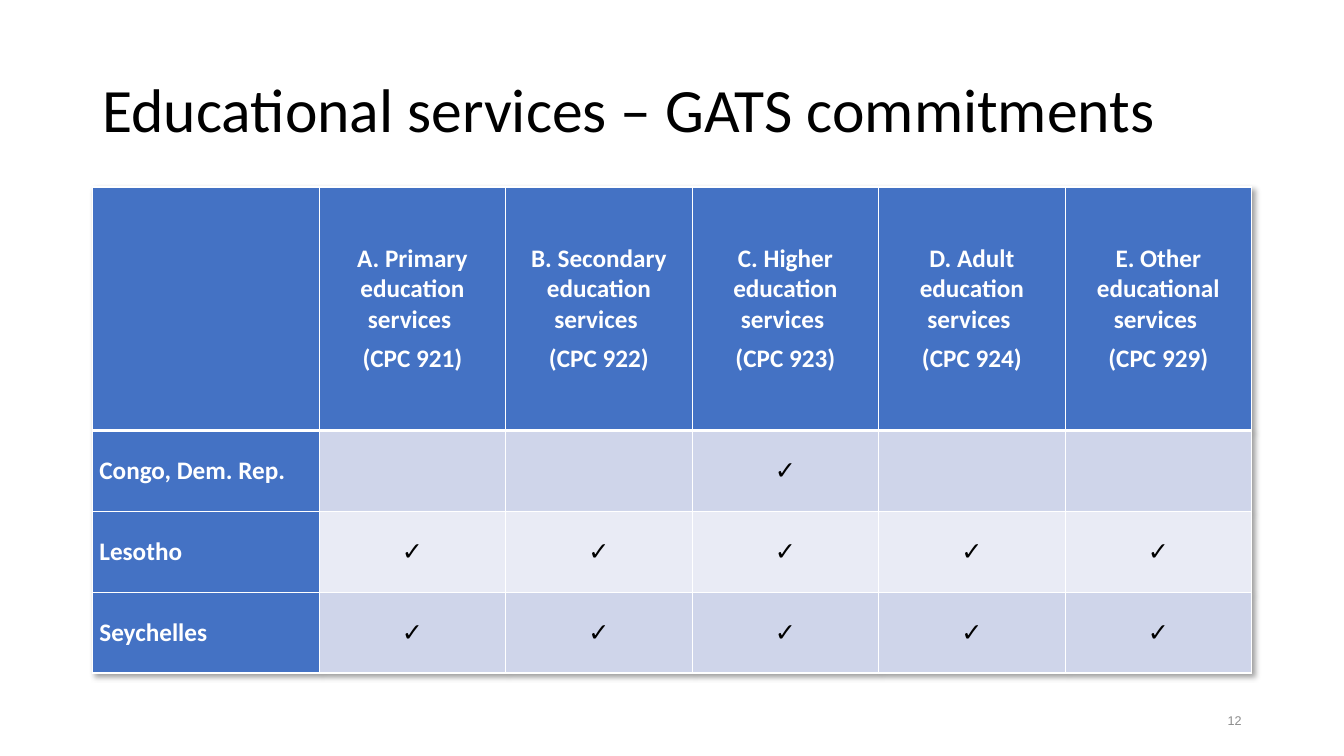
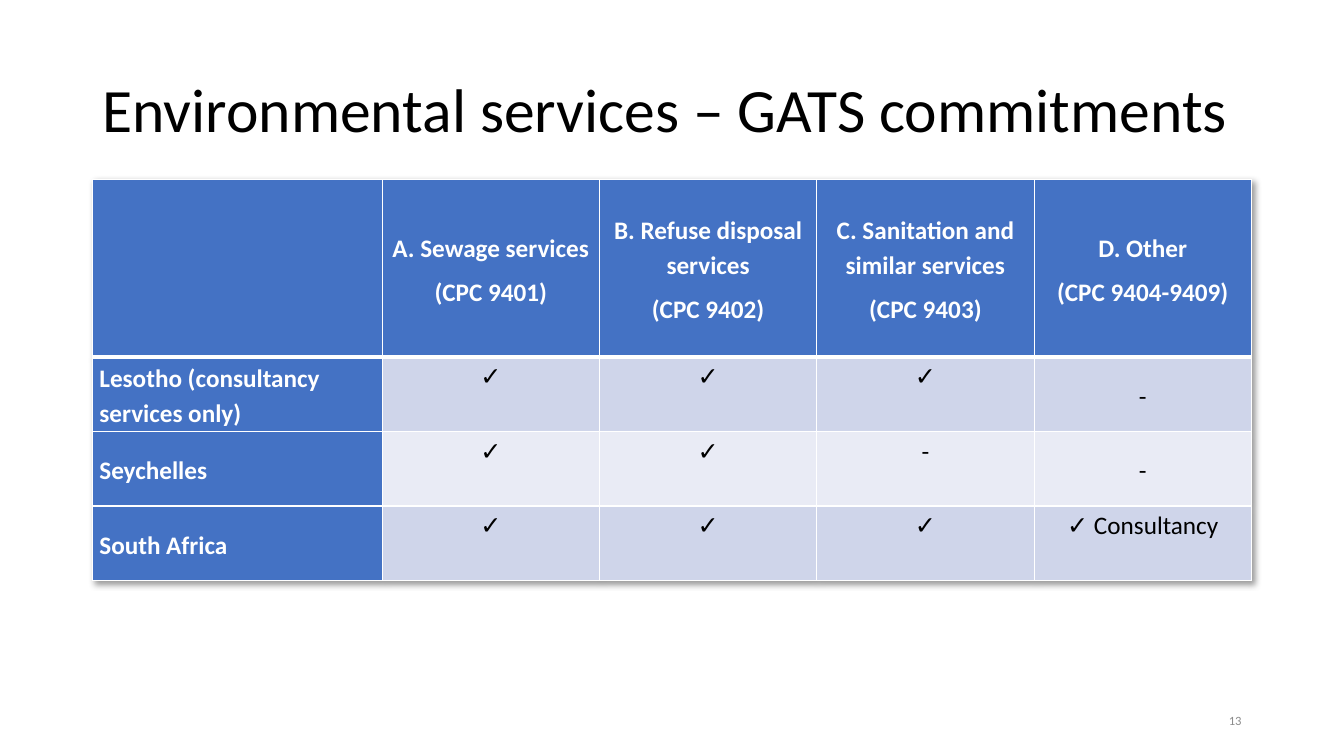
"""Build two slides of GATS commitment tables with a shared title, table and number style."""
from lxml import etree
from pptx import Presentation
from pptx import util as u
from pptx.dml import color
from pptx.enum import text
from pptx.oxml import ns

SCALE = 9525
SLIDE_SIZE = (1280, 720)
TITLE_BOX = (88, 38, 1104, 139)
NUMBER_BOX = (904, 667, 288, 38)
COLORS = {
    "ink": "000000",
    "paper": "FFFFFF",
    "header": "4472C4",
    "odd": "CFD5EA",
    "even": "E9EBF5",
    "number": "8C8C8C",
}
FONT = "Calibri"
MIDDLE, TOP = text.MSO_ANCHOR.MIDDLE, text.MSO_ANCHOR.TOP
LEFT, CENTER, RIGHT = text.PP_ALIGN.LEFT, text.PP_ALIGN.CENTER, text.PP_ALIGN.RIGHT
CELL_FORMAT = {
    "margin_left": u.Inches(0.07),
    "margin_right": u.Inches(0.07),
    "margin_top": 0,
    "margin_bottom": 0,
}
CELL_SPACING = {"space_before": u.Pt(3), "space_after": u.Pt(3)}
SHADOW = {"blurRad": "50800", "dist": "38100", "dir": "2700000", "algn": "tl", "rotWithShape": "0"}
CHECK = "✓"

SLIDES = [
    {
        "title": "Educational services – GATS commitments",
        "number": "12",
        "number_font": "Arial",
        "box": (88, 178, 1104, 463),
        "label_width": 216,
        "row_height": 77,
        "line_spacing": 1.0,
        "mark_anchor": MIDDLE,
        "headers": [
            ("A. Primary education services ", "(CPC 921)"),
            ("B. Secondary education services ", "(CPC 922)"),
            ("C. Higher education services ", "(CPC 923)"),
            ("D. Adult education services ", "(CPC 924)"),
            ("E. Other educational services ", "(CPC 929)"),
        ],
        "rows": [
            ("Congo, Dem. Rep.", ["", "", CHECK, "", ""]),
            ("Lesotho", [CHECK] * 5),
            ("Seychelles", [CHECK] * 5),
        ],
    },
    {
        "title": "Environmental services – GATS commitments",
        "number": "13",
        "number_font": FONT,
        "box": (88, 171, 1104, 382),
        "label_width": 276,
        "row_height": 71,
        "line_spacing": 1.15,
        "mark_anchor": TOP,
        "headers": [
            ("A. Sewage services", "(CPC 9401)"),
            ("B. Refuse disposal services", "(CPC 9402)"),
            ("C. Sanitation and similar services", "(CPC 9403)"),
            ("D. Other", "(CPC 9404-9409)"),
        ],
        "rows": [
            ("Lesotho (consultancy services only)", [CHECK, CHECK, CHECK, "-"]),
            ("Seychelles", [CHECK, CHECK, "-", "-"]),
            ("South Africa", [CHECK, CHECK, CHECK, f"{CHECK} Consultancy"]),
        ],
    },
]


def px(length):
    """Turn px into EMU."""
    return u.Emu(round(length * SCALE))


def apply_format(target, values):
    """Set each attribute of the target from a dict."""
    for name, value in values.items():
        setattr(target, name, value)


def write_text(frame, lines, size, ink, align, font=FONT, bold=False, spacing=None):
    """Write one paragraph per line in a single style."""
    for index, line in enumerate(lines):
        paragraph = frame.add_paragraph() if index else frame.paragraphs[0]
        apply_format(paragraph, {"alignment": align, **(spacing or {})})
        run = paragraph.add_run()
        run.text = line
        apply_format(run.font, {"size": u.Pt(size), "name": font, "bold": bold})
        run.font.color.rgb = color.RGBColor.from_string(COLORS[ink])


def fill_text_box(shape, box, lines, **style):
    """Move a text shape to its box and write its text."""
    apply_format(shape, dict(zip(("left", "top", "width", "height"), map(px, box))))
    frame = shape.text_frame
    apply_format(frame, {
        "word_wrap": True,
        "auto_size": text.MSO_AUTO_SIZE.NONE,
        "vertical_anchor": MIDDLE,
    })
    write_text(frame, lines, **style)


def add_color(parent, name):
    """Append a colour element and return it."""
    return etree.SubElement(parent, ns.qn("a:srgbClr"), val=COLORS[name])


def style_cell(cell, fill, anchor, row):
    """Give a cell its fill, margins and white borders."""
    apply_format(cell, {**CELL_FORMAT, "vertical_anchor": anchor})
    cell.fill.solid()
    cell.fill.fore_color.rgb = color.RGBColor.from_string(COLORS[fill])
    properties = cell._tc.get_or_add_tcPr()
    widths = {"L": 1, "R": 1, "T": 3 if row == 1 else 1, "B": 3 if row == 0 else 1}
    for index, (side, width) in enumerate(widths.items()):
        line = etree.Element(ns.qn(f"a:ln{side}"), w=str(u.Pt(width)))
        add_color(etree.SubElement(line, ns.qn("a:solidFill")), "paper")
        properties.insert(index, line)


def add_table_shadow(table):
    """Put a soft shadow at the lower right of a table."""
    effects = etree.Element(ns.qn("a:effectLst"))
    shadow = etree.SubElement(effects, ns.qn("a:outerShdw"), **SHADOW)
    etree.SubElement(add_color(shadow, "ink"), ns.qn("a:alpha"), val="40000")
    table._tbl.tblPr.insert(0, effects)


def add_commitments(slide, content):
    """Add the table of services by country."""
    box, headers, rows = content["box"], content["headers"], content["rows"]
    grid = [[(), *headers]]
    grid += [[(label,), *((mark,) if mark else () for mark in marks)] for label, marks in rows]
    table = slide.shapes.add_table(len(grid), len(grid[0]), *map(px, box)).table
    apply_format(table, {"first_row": True, "first_col": True, "horz_banding": True})
    add_table_shadow(table)

    mark_width = (box[2] - content["label_width"]) / len(headers)
    header_height = box[3] - content["row_height"] * len(rows)
    for index, column in enumerate(table.columns):
        column.width = px(mark_width if index else content["label_width"])
    for index, row in enumerate(table.rows):
        row.height = px(content["row_height"] if index else header_height)

    spacing = {**CELL_SPACING, "line_spacing": content["line_spacing"]}
    for row, cells in enumerate(grid):
        for column, lines in enumerate(cells):
            cell = table.cell(row, column)
            heading = row == 0 or column == 0
            last_dash = column == len(headers) and lines == ("-",)
            fill = "header" if heading else "odd" if row % 2 else "even"
            anchor = MIDDLE if heading or last_dash else content["mark_anchor"]
            style_cell(cell, fill, anchor, row)
            write_text(cell.text_frame, lines, 18, "paper" if heading else "ink",
                       CENTER if column else LEFT, bold=heading, spacing=spacing)


def add_commitment_slide(presentation, content):
    """Add one slide with its title, table and number."""
    slide = presentation.slides.add_slide(presentation.slide_layouts[5])
    fill_text_box(slide.shapes.title, TITLE_BOX, [content["title"]], size=44, ink="ink",
                  align=LEFT, spacing={"line_spacing": 0.9})
    add_commitments(slide, content)
    number = slide.shapes.add_textbox(0, 0, 0, 0)
    fill_text_box(number, NUMBER_BOX, [content["number"]], size=9, ink="number",
                  align=RIGHT, font=content["number_font"])


def main():
    """Build and save the presentation."""
    presentation = Presentation()
    presentation.slide_width, presentation.slide_height = map(px, SLIDE_SIZE)
    for content in SLIDES:
        add_commitment_slide(presentation, content)
    presentation.save("out.pptx")


if __name__ == "__main__":
    main()
